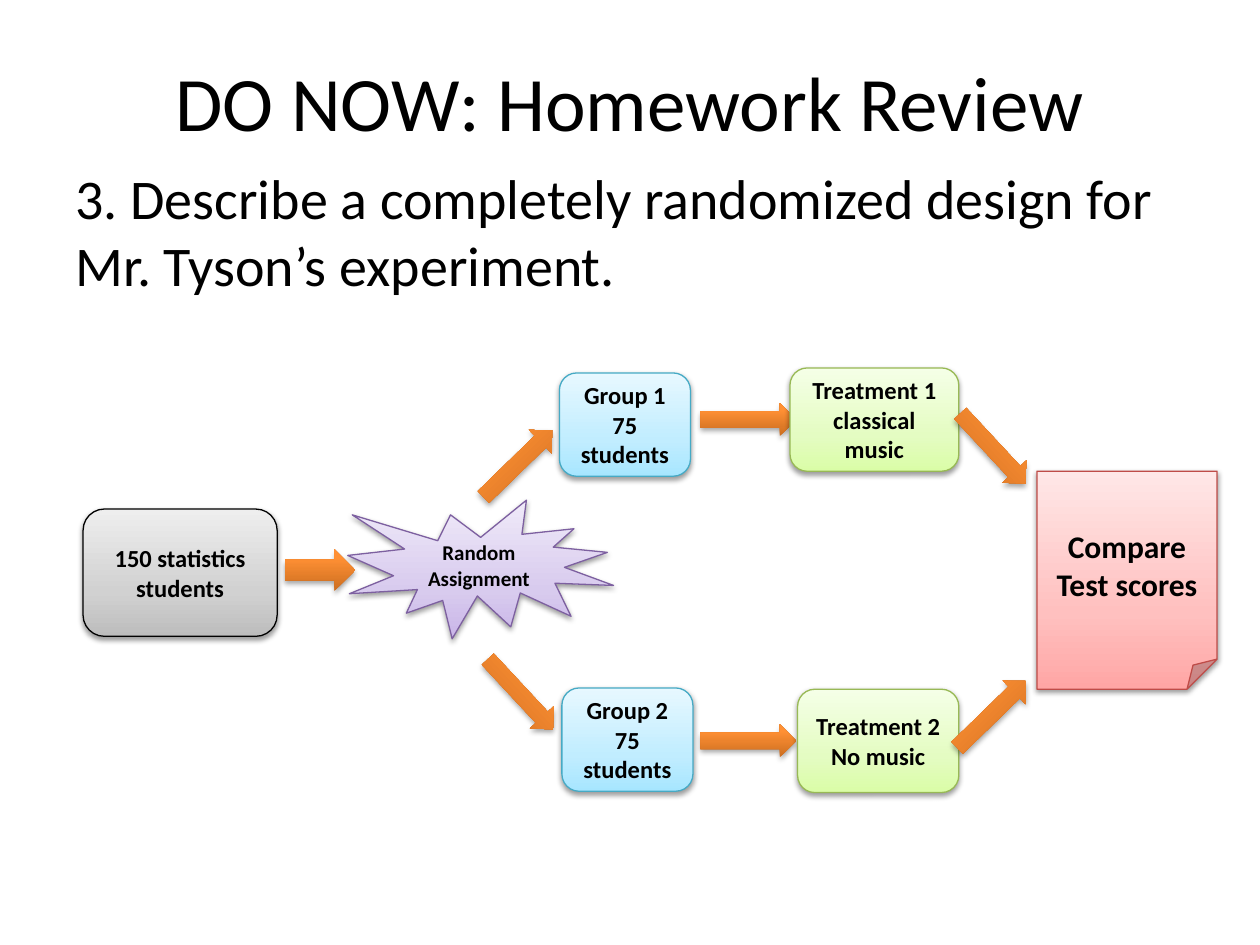
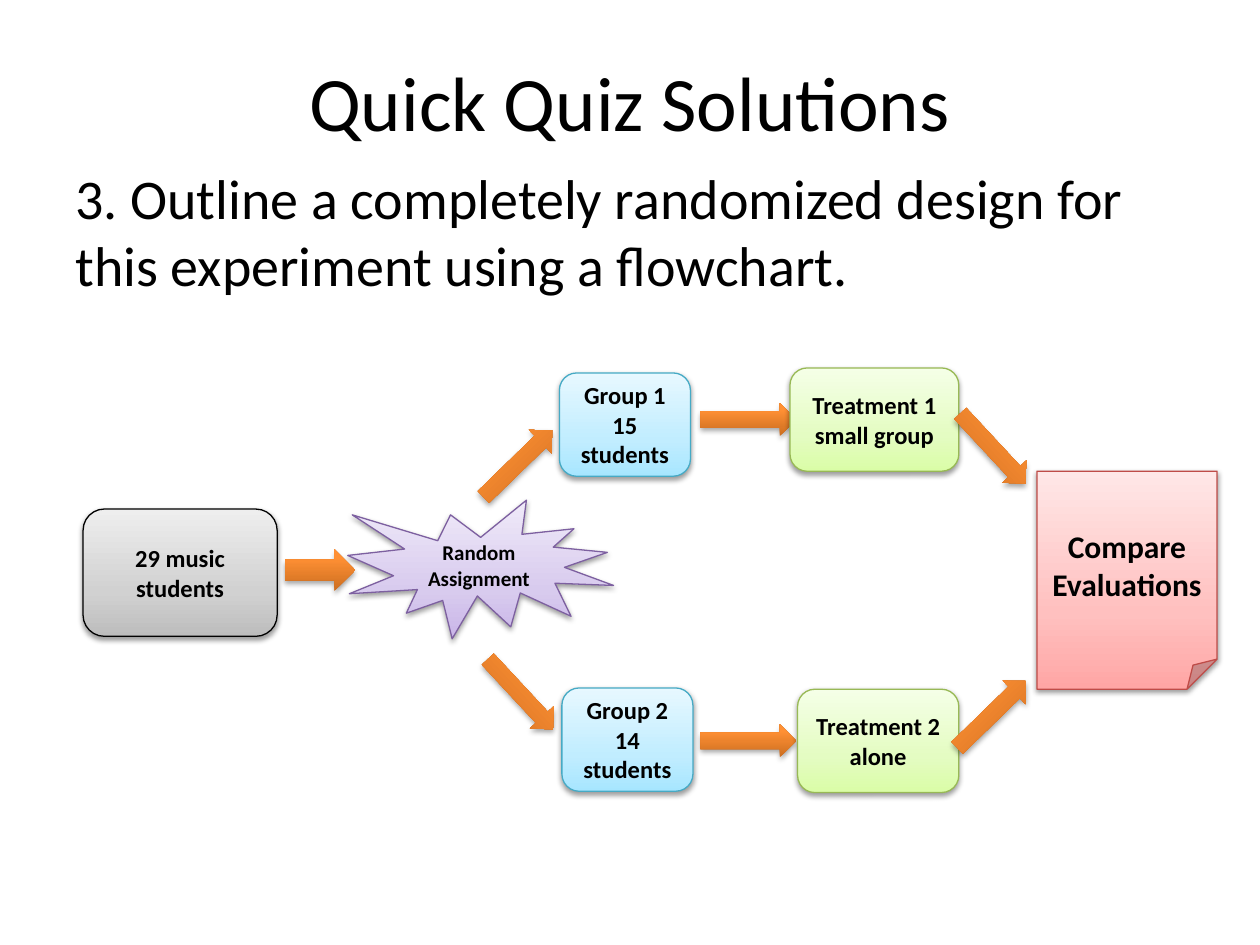
from lxml import etree
from pptx import Presentation
from pptx.dml.color import RGBColor
from pptx.enum import shapes, text
from pptx.oxml import ns
from pptx.util import Inches, Pt

FONT = "Calibri"
INK = "000000"
BOX, ARROW = shapes.MSO_SHAPE.ROUNDED_RECTANGLE, shapes.MSO_SHAPE.RIGHT_ARROW
BURST, NOTE = shapes.MSO_SHAPE.EXPLOSION1, shapes.MSO_SHAPE.FOLDED_CORNER
GREY = ((0, "BDBDBD"), (35, "D1D1D1"), (100, "EEEEEE"))
PURPLE = ((0, "C9B5E8"), (35, "D8CBEE"), (100, "F0EAF9"))
BLUE = ((0, "A7E6FF"), (35, "C1EDFF"), (100, "E7F8FF"))
GREEN = ((0, "DAFDA7"), (35, "E4FCC2"), (100, "F5FFE7"))
RED = ((0, "FFA6A5"), (35, "FFC0BF"), (100, "FFE7E7"))
ORANGE = ((0, "CC6E20"), (80, "FF9034"), (100, "FF9136"))
UP, DOWN = 315.8, 47.1
CHART_BOX = (0.66, 2.92)
LONG_ARROW = (0.76, 0.26)

SLIDES = [
    dict(title="DO NOW: Homework Review",
         question="3. Describe a completely randomized design for Mr. Tyson’s experiment.",
         subjects="150 statistics students",
         groups=("Group 1 75 students", "Group 2\n75 students"),
         treatments=("Treatment 1 classical music", "Treatment 2\nNo music"),
         outcome="Compare Test scores"),
    dict(title="Quick Quiz Solutions",
         question="3. Outline a completely randomized design for this experiment using a flowchart.",
         subjects="29 music students",
         groups=("Group 1 15 students", "Group 2\n14 students"),
         treatments=("Treatment 1 small group", "Treatment 2\nalone"),
         outcome="Compare Evaluations"),
]


def color(value):
    """Turn a hex string into a colour."""
    return RGBColor.from_string(value)


def add_xml(parent, tag, **attributes):
    """Append a drawing element and return it."""
    return etree.SubElement(parent, ns.qn("a:" + tag),
                            {key: str(value) for key, value in attributes.items()})


def write(frame, words, size, align, bold=False):
    """Fill a text frame and format every run."""
    frame.text = words
    frame.word_wrap = True
    for paragraph in frame.paragraphs:
        paragraph.alignment = align
        for run in paragraph.runs:
            run.font.name, run.font.size, run.font.bold = FONT, Pt(size), bold
            run.font.color.rgb = color(INK)


def add_heading(slide, box, words, size, align, anchor):
    """Place plain text in the given box."""
    frame = slide.shapes.add_textbox(*map(Inches, box)).text_frame
    write(frame, words, size, align)
    frame.vertical_anchor = anchor


def paint(shape, stops, shade, distance):
    """Give a shape an upward gradient and a soft shadow below."""
    shape.fill.gradient()
    gradient = shape._element.spPr.find(ns.qn("a:gradFill"))
    for child in list(gradient):
        gradient.remove(child)
    stop_list = add_xml(gradient, "gsLst")
    for position, value in stops:
        stop = add_xml(stop_list, "gs", pos=position * 1000)
        add_xml(stop, "srgbClr", val=value)
    add_xml(gradient, "lin", ang=16200000, scaled=0)
    shape.shadow.inherit = False
    effects = shape._element.spPr.find(ns.qn("a:effectLst"))
    shadow = add_xml(effects, "outerShdw", blurRad=Pt(3.1), dist=Pt(distance),
                     dir=5400000, rotWithShape=0)
    add_xml(add_xml(shadow, "srgbClr", val=INK), "alpha", val=shade * 1000)


def add_flowchart(slide, origin, content):
    """Draw the randomized design from its top left corner."""
    chart = slide.shapes.add_group_shape()

    def place(kind, left, top, width, height):
        """Add a shape relative to the flowchart corner."""
        return chart.shapes.add_shape(kind, Inches(origin[0] + left), Inches(origin[1] + top),
                                      Inches(width), Inches(height))

    def step(kind, box, words, stops, outline, size=14):
        """Add a labelled step."""
        shape = place(kind, *box)
        paint(shape, stops, 38, 1.6)
        shape.line.color.rgb = color(outline)
        shape.line.width = Pt(0.75)
        write(shape.text_frame, words, size, text.PP_ALIGN.CENTER, True)
        shape.text_frame.vertical_anchor = text.MSO_ANCHOR.MIDDLE

    def arrow(left, top, turn=0, size=LONG_ARROW):
        """Add a block arrow turned by some degrees."""
        shape = place(ARROW, left, top, *size)
        paint(shape, ORANGE, 35, 1.8)
        shape.line.fill.background()
        shape.rotation = turn

    step(BOX, (0, 1.12, 1.54, 1.01), content["subjects"], GREY, INK)
    step(BURST, (2.1, 1.05, 2.11, 1.1), "Random Assignment", PURPLE, "7D60A0", 12)
    arrow(1.6, 1.44, size=(0.56, 0.33))
    for words, left, top in zip(content["groups"], (3.78, 3.8), (0.04, 2.54)):
        step(BOX, (left, top, 1.04, 0.82), words, BLUE, "46AAC5")
    arrow(3.07, 0.63, UP)
    arrow(3.09, 2.46, DOWN)
    for top in (0.28, 2.83):
        arrow(4.9, top)
    for words, left, top in zip(content["treatments"], (5.61, 5.67), (0, 2.55)):
        step(BOX, (left, top, 6.95 - left, 0.82), words, GREEN, "98B955")
    arrow(6.83, 2.62, UP)
    arrow(6.84, 0.51, DOWN)
    step(NOTE, (7.57, 0.82, 1.43, 1.73), content["outcome"], RED, "BF4C48", 18)


def add_design_slide(deck, content):
    """Build one slide with title, question and flowchart."""
    slide = deck.slides.add_slide(deck.slide_layouts[6])
    add_heading(slide, (0.5, 0.17, 9, 1.25), content["title"], 44,
                text.PP_ALIGN.CENTER, text.MSO_ANCHOR.MIDDLE)
    add_heading(slide, (0.5, 1.25, 9, 5.75), content["question"], 32,
                text.PP_ALIGN.LEFT, text.MSO_ANCHOR.TOP)
    add_flowchart(slide, CHART_BOX, content)


def main():
    """Build and save the deck."""
    deck = Presentation()
    deck.slide_width, deck.slide_height = Inches(10), Inches(7.5)
    for content in SLIDES:
        add_design_slide(deck, content)
    deck.save("out.pptx")


if __name__ == "__main__":
    main()
